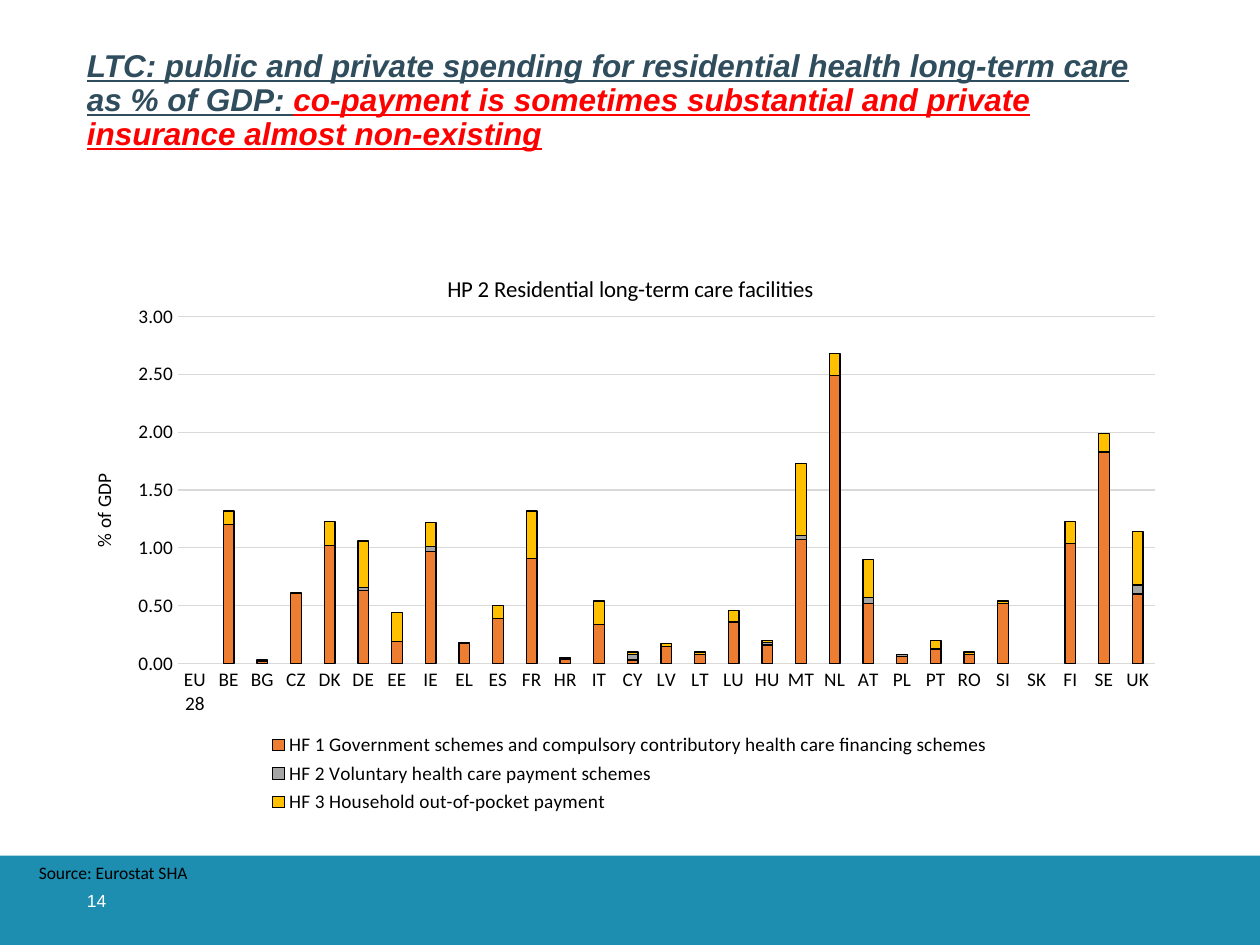
from lxml import etree
from pptx import Presentation
from pptx import util as u
from pptx.chart.data import CategoryChartData
from pptx.dml.color import RGBColor
from pptx.enum import chart as charts, shapes, text
from pptx.oxml import ns

# Content
TITLE = [
    ("LTC: public and private spending for residential health long-term care as % of GDP: ", "2F4D5D"),
    ("co-payment is sometimes substantial and private insurance almost non-existing", "FF0000"),
]
PAGE_NUMBER = "14"
SOURCE = "Source: Eurostat SHA"
CHART_TITLE = "HP 2 Residential long-term care facilities"
AXIS_TITLE = "% of GDP"
COUNTRIES = ("EU28 BE BG CZ DK DE EE IE EL ES FR HR IT CY LV LT LU HU MT NL "
             "AT PL PT RO SI SK FI SE UK").split()
SERIES = [
    ("HF 1 Government schemes and compulsory contributory health care financing schemes", "ED7D31",
     [None, 1.2, 0.02, 0.61, 1.02, 0.63, 0.19, 0.97, 0.17, 0.39, 0.91, 0.04, 0.34, 0.03, 0.15,
      0.08, 0.36, 0.16, 1.07, 2.49, 0.52, 0.06, 0.12, 0.08, 0.52, None, 1.04, 1.83, 0.6]),
    ("HF 2 Voluntary health care payment schemes", "A5A5A5",
     [None, 0, 0, None, 0, 0.03, 0, 0.04, 0.01, 0, None, 0, 0, 0.05, None,
      0, 0, 0.02, 0.04, 0, 0.05, 0.02, 0.01, 0, 0, None, None, None, 0.08]),
    ("HF 3 Household out-of-pocket payment", "FFC000",
     [None, 0.12, 0.01, 0, 0.21, 0.4, 0.25, 0.21, 0, 0.11, 0.41, 0.01, 0.2, 0.02, 0.02,
      0.02, 0.1, 0.02, 0.62, 0.19, 0.33, 0, 0.07, 0.02, 0.02, None, 0.19, 0.16, 0.46]),
]
PLOT_AREA = {"x": 0.084, "y": 0.114, "w": 0.899, "h": 0.612}

# Grid: content column and footer band
LEFT, WIDTH = 0.69, 8.62
FOOT_TOP, FOOT_HEIGHT = 6.79, 0.71


def color(value):
    return RGBColor.from_string(value)


def inches(*lengths):
    return [u.Inches(length) for length in lengths]


def set_font(font, shade, **values):
    for name, value in values.items():
        setattr(font, name, value)
    font.color.rgb = color(shade)


def set_frame(frame, margins=None, **values):
    for name, value in {"word_wrap": True, **values}.items():
        setattr(frame, name, value)
    if margins is not None:
        for side in ("left", "top", "right", "bottom"):
            setattr(frame, f"margin_{side}", u.Inches(margins))


def set_line(line, shade):
    line.color.rgb = color(shade)
    line.width = u.Pt(0.75)


def add_label(page, words, at, font, shade, **frame_values):
    box = page.shapes.add_textbox(*inches(*at))
    set_frame(box.text_frame, **frame_values)
    span = box.text_frame.paragraphs[0].add_run()
    span.text = words
    set_font(span.font, shade, size=u.Pt(10), name=font)


def set_chart_title(owner, words, size):
    para = owner.text_frame.paragraphs[0]
    span = para.add_run()
    span.text = words
    set_font(span.font, "000000", size=u.Pt(size), name="Calibri", bold=False)


def place_plot(chart):
    plot_area = chart.plots[0]._element.getparent()
    for old in plot_area.findall(ns.qn("c:layout")):
        plot_area.remove(old)
    layout = etree.Element(ns.qn("c:layout"))
    manual = etree.SubElement(layout, ns.qn("c:manualLayout"))
    parts = {"layoutTarget": "inner", "xMode": "edge", "yMode": "edge", **PLOT_AREA}
    for name, value in parts.items():
        etree.SubElement(manual, ns.qn(f"c:{name}")).set("val", str(value))
    plot_area.insert(0, layout)


def add_spending_chart(page):
    data = CategoryChartData(number_format="0.00")
    data.categories = COUNTRIES
    for name, _, values in SERIES:
        data.add_series(name, values)
    chart = page.shapes.add_chart(charts.XL_CHART_TYPE.COLUMN_STACKED,
                                  *inches(LEFT, 2, WIDTH, 4.5), data).chart
    set_font(chart.font, "000000", size=u.Pt(11), name="Calibri")
    set_chart_title(chart.chart_title, CHART_TITLE, 13)
    chart.has_legend = True
    chart.legend.position = charts.XL_LEGEND_POSITION.BOTTOM
    chart.legend.include_in_layout = False

    # Bars
    plot = chart.plots[0]
    plot.gap_width, plot.overlap, plot.vary_by_categories = 219, 100, False
    for series, (_, shade, _) in zip(plot.series, SERIES):
        series.format.fill.solid()
        series.format.fill.fore_color.rgb = color(shade)
        set_line(series.format.line, "000000")

    # Axes
    for axis in (chart.category_axis, chart.value_axis):
        axis.major_tick_mark = axis.minor_tick_mark = charts.XL_TICK_MARK.NONE
        set_font(axis.tick_labels.font, "000000", size=u.Pt(11), name="Calibri")
    set_line(chart.category_axis.format.line, "D9D9D9")
    value_axis = chart.value_axis
    value_axis.minimum_scale, value_axis.maximum_scale, value_axis.major_unit = 0, 3, 0.5
    value_axis.format.line.fill.background()
    set_line(value_axis.major_gridlines.format.line, "D9D9D9")
    value_axis.tick_labels.number_format = "#,##0.00"
    value_axis.tick_labels.number_format_is_linked = False
    set_chart_title(value_axis.axis_title, AXIS_TITLE, 11)
    place_plot(chart)


def main():
    deck = Presentation()
    deck.slide_width, deck.slide_height = inches(10, 7.5)
    page = deck.slides.add_slide(deck.slide_layouts[5])

    # Footer band
    band = page.shapes.add_shape(shapes.MSO_SHAPE.RECTANGLE,
                                 *inches(0, FOOT_TOP, 10, FOOT_HEIGHT))
    band.shadow.inherit = False
    band.fill.solid()
    band.fill.fore_color.rgb = color("1D8DB0")
    band.line.fill.background()

    # Title
    title = page.shapes.title
    title.left, title.top, title.width, title.height = inches(LEFT, 0.4, WIDTH, 1.45)
    set_frame(title.text_frame, margins=0, vertical_anchor=text.MSO_ANCHOR.TOP,
              auto_size=text.MSO_AUTO_SIZE.NONE)
    para = title.text_frame.paragraphs[0]
    para.alignment, para.line_spacing = text.PP_ALIGN.LEFT, 0.9
    for words, shade in TITLE:
        span = para.add_run()
        span.text = words
        set_font(span.font, shade, size=u.Pt(18), name="Arial",
                 bold=True, italic=True, underline=True)

    add_spending_chart(page)

    # Page number and source
    add_label(page, PAGE_NUMBER, (LEFT, FOOT_TOP, FOOT_HEIGHT, FOOT_HEIGHT), "Arial", "FFFFFF",
              margins=0, vertical_anchor=text.MSO_ANCHOR.MIDDLE)
    add_label(page, SOURCE, (0.21, FOOT_TOP, 3.5, 0.27), "Calibri", "000000",
              auto_size=text.MSO_AUTO_SIZE.SHAPE_TO_FIT_TEXT)

    deck.save("out.pptx")


if __name__ == "__main__":
    main()
